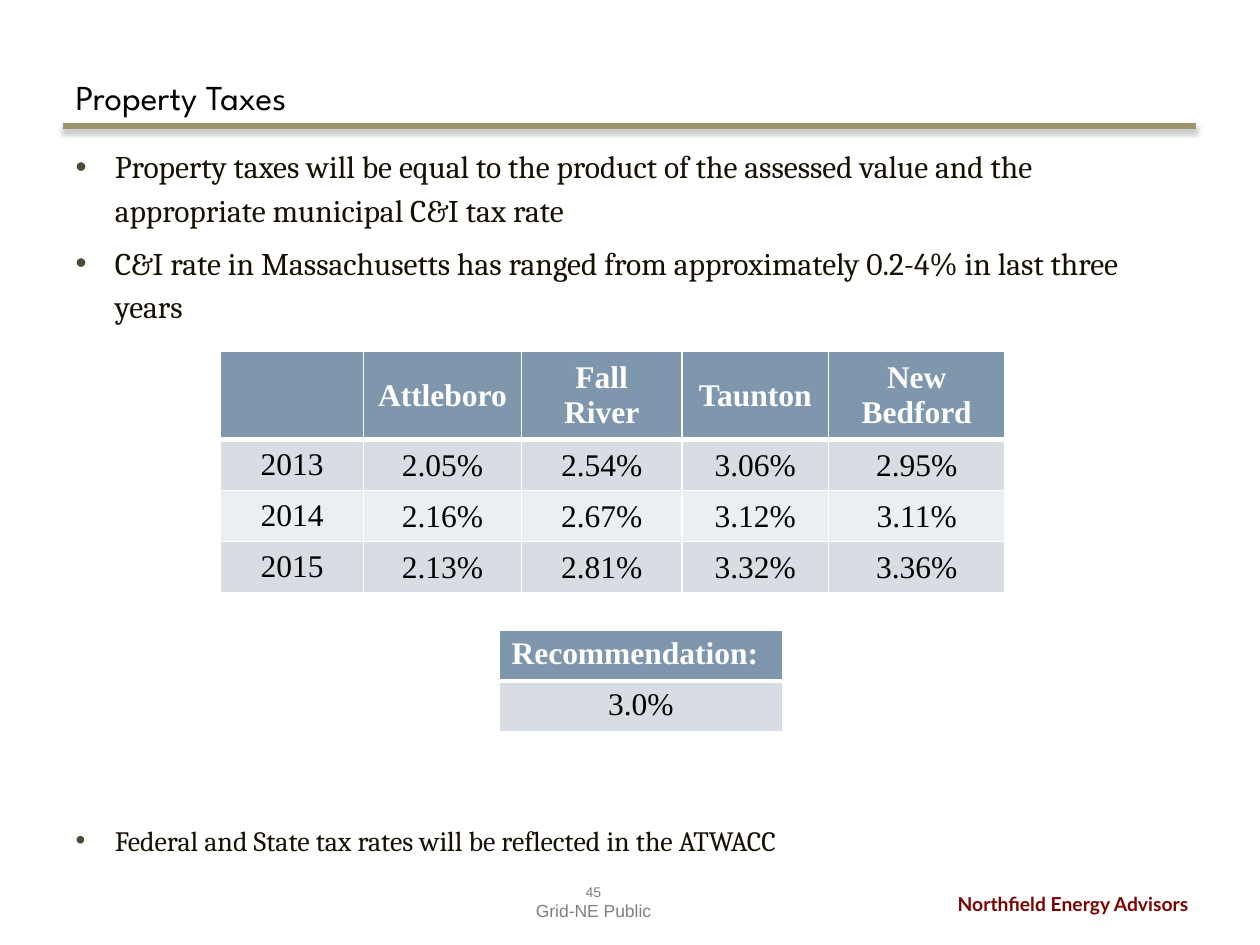
from lxml import etree
from pptx import Presentation, util as u
from pptx.dml.color import RGBColor
from pptx.enum import shapes, text
from pptx.oxml.ns import nsdecls, qn

HUE = {
    "ink": "000000", "body": "161003", "bullet": "504A36", "rule": "9D936F",
    "firm": "7A0400", "foot": "808080", "white": "FFFFFF",
    "head": "7E97AD", "odd": "D8DDE3", "even": "ECEFF1",
}
TITLE = "Property Taxes"
# wording, size, space before
POINTS = [
    ("Property taxes will be equal to the product of the assessed value "
     "and the appropriate municipal C&I tax rate", 18, 0),
    ("C&I rate in Massachusetts has ranged from approximately 0.2-4% "
     "in last three years", 18, 0),
    ("Federal and State tax rates will be reflected in the ATWACC", 16, 276),
]
RATES = [
    ("", "Attleboro", "Fall River", "Taunton", "New Bedford"),
    ("2013", "2.05%", "2.54%", "3.06%", "2.95%"),
    ("2014", "2.16%", "2.67%", "3.12%", "3.11%"),
    ("2015", "2.13%", "2.81%", "3.32%", "3.36%"),
]
ADVICE = [("Recommendation:",), ("3.0%",)]
FIRM = "Northfield Energy Advisors"
FOOT = [("45", 8), ("Grid-NE Public", 10)]
ROW = 1.03
ALIGN = text.PP_ALIGN
ANCHOR = text.MSO_ANCHOR


def place(shape, left, top, width, height):
    shape.left, shape.top = u.Cm(left), u.Cm(top)
    shape.width, shape.height = u.Cm(width), u.Cm(height)


def style(para, face, size, hue, bold=False, align=ALIGN.LEFT):
    para.alignment = align
    for run in para.runs:
        font = run.font
        font.name, font.size, font.bold = face, u.Pt(size), bold
        font.color.rgb = RGBColor.from_string(HUE[hue])


def bullet(para):
    props = para._p.get_or_add_pPr()
    props.set("marL", str(u.Cm(0.79)))
    props.set("indent", str(-u.Cm(0.79)))
    for part in (
        f'<a:buClr {nsdecls("a")}><a:srgbClr val="{HUE["bullet"]}"/></a:buClr>',
        f'<a:buFont {nsdecls("a")} typeface="Arial"/>',
        f'<a:buChar {nsdecls("a")} char="•"/>',
    ):
        props.append(etree.fromstring(part))


def border(cell, base):
    """Draw white cell edges, with the bottom one base points wide."""
    props = cell._tc.get_or_add_tcPr()
    for spot, (side, wide) in enumerate(zip("LRTB", (1, 1, 1, base))):
        props.insert(spot, etree.fromstring(
            f'<a:ln{side} {nsdecls("a")} w="{u.Pt(wide)}"><a:solidFill>'
            f'<a:srgbClr val="{HUE["white"]}"/></a:solidFill></a:ln{side}>'))


def grid(slide, rows, left, top, widths, first, anchor):
    """Add a table whose header row is first cm high."""
    heights = [first] + [ROW] * (len(rows) - 1)
    table = slide.shapes.add_table(
        len(rows), len(widths), u.Cm(left), u.Cm(top),
        u.Cm(sum(widths)), u.Cm(sum(heights))).table
    for col, width in zip(table.columns, widths):
        col.width = u.Cm(width)
    for i, (row, height) in enumerate(zip(rows, heights)):
        table.rows[i].height = u.Cm(height)
        for j, word in enumerate(row):
            cell = table.cell(i, j)
            cell.text = word
            cell.vertical_anchor = anchor
            if i and j:
                cell.margin_left = cell.margin_right = u.Cm(0.03)
                cell.margin_top, cell.margin_bottom = u.Cm(0.03), 0
            cell.fill.solid()
            fill = "odd" if i % 2 else "even" if i else "head"
            cell.fill.fore_color.rgb = RGBColor.from_string(HUE[fill])
            border(cell, 1 if i else 3)
            style(cell.text_frame.paragraphs[0], "Times New Roman", 18,
                  "ink" if i else "white", not i, ALIGN.CENTER)
    return table


def label(slide, lines, box, face, hue, bold, align):
    shape = slide.shapes.add_textbox(0, 0, 0, 0)
    place(shape, *box)
    frame = shape.text_frame
    frame.word_wrap = True
    frame.text = "\n".join(word for word, _ in lines)
    for para, (_, size) in zip(frame.paragraphs, lines):
        style(para, face, size, hue, bold, align)


def rule(slide):
    line = slide.shapes.add_connector(
        shapes.MSO_CONNECTOR.STRAIGHT,
        u.Cm(1.27), u.Cm(2.54), u.Cm(24.1), u.Cm(2.54))
    line.line.width = u.Pt(3)
    line.line.color.rgb = RGBColor.from_string(HUE["rule"])
    props = line._element.find(qn("p:spPr"))
    props.append(etree.fromstring(
        f'<a:effectLst {nsdecls("a")}><a:outerShdw blurRad="{u.Pt(3.1)}" '
        f'dist="{u.Pt(1.8)}" dir="5400000" rotWithShape="0">'
        f'<a:srgbClr val="{HUE["ink"]}"><a:alpha val="35000"/></a:srgbClr>'
        '</a:outerShdw></a:effectLst>'))


def main():
    deck = Presentation()
    deck.slide_width, deck.slide_height = u.Cm(25.4), u.Cm(19.05)
    slide = deck.slides.add_slide(deck.slide_layouts[1])
    rule(slide)
    label(slide, [(FIRM, 11)], (14.71, 17.86, 9.5, 0.74),
          "Lato", "firm", True, ALIGN.RIGHT)
    label(slide, FOOT, (8.69, 17.68, 6.55, 0.76),
          "Arial", "foot", False, ALIGN.CENTER)

    title, body = slide.shapes.title, slide.placeholders[1]
    place(title, 1.27, 0.38, 22.86, 2.11)
    title.text_frame.text = TITLE
    title.text_frame.vertical_anchor = ANCHOR.BOTTOM
    style(title.text_frame.paragraphs[0], "League Spartan", 20, "ink")

    place(body, 1.27, 2.74, 22.86, 14.81)
    frame = body.text_frame
    frame.text = "\n".join(word for word, *_ in POINTS)
    for para, (_, size, gap) in zip(frame.paragraphs, POINTS):
        bullet(para)
        para.line_spacing = 1.14
        para.space_before, para.space_after = u.Pt(gap), u.Pt(6)
        style(para, "Cambria", size, "body")
    for box in (title, body):
        box.text_frame.auto_size = text.MSO_AUTO_SIZE.NONE

    grid(slide, RATES, 4.45, 7.08, (2.88, 3.18, 3.24, 2.95, 3.56),
         1.63, ANCHOR.MIDDLE)
    advice = grid(slide, ADVICE, 10.06, 12.7, (5.72,), ROW, ANCHOR.TOP)
    advice.cell(0, 0).text_frame.paragraphs[0].alignment = ALIGN.LEFT
    deck.save("out.pptx")


if __name__ == "__main__":
    main()
